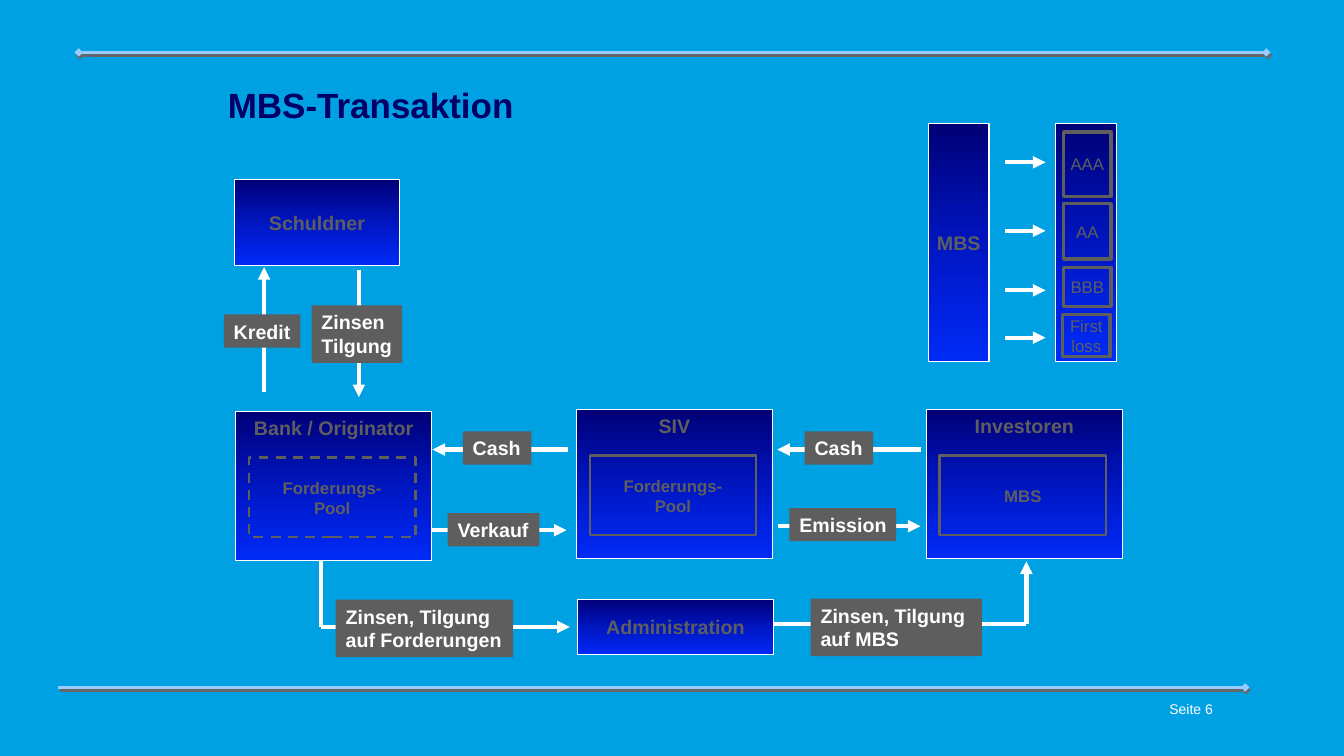
from lxml import etree
from pptx import Presentation
from pptx.dml.color import RGBColor
from pptx.enum.dml import MSO_LINE
from pptx.enum.shapes import MSO_CONNECTOR, MSO_SHAPE
from pptx.enum.text import MSO_ANCHOR, MSO_AUTO_SIZE, PP_ALIGN
from pptx.oxml.ns import qn
from pptx.util import Inches, Pt

STRAIGHT, RECTANGLE = MSO_CONNECTOR.STRAIGHT, MSO_SHAPE.RECTANGLE
TOP, MIDDLE = MSO_ANCHOR.TOP, MSO_ANCHOR.MIDDLE
LEFT, CENTER = PP_ALIGN.LEFT, PP_ALIGN.CENTER
NO_FIT = MSO_AUTO_SIZE.NONE
DASH = MSO_LINE.DASH

COLORS = {
    "background": "00A1E3", "title": "000066", "white": "FFFFFF", "grey": "5E5E5E",
    "rule": "99CCFF", "shadow": "676767", "party_top": "000076", "party_bottom": "0000FF",
}
RGB = {role: RGBColor.from_string(value) for role, value in COLORS.items()}

# Look of each kind of box: fill, outline, text frame, alignment and font
PARTY = {"fill": "gradient", "line": ("white", 0.75), "align": CENTER,
         "frame": {"vertical_anchor": MIDDLE, "word_wrap": False},
         "font": {"size": Pt(14), "bold": True}, "ink": "grey"}
HEADED_PARTY = PARTY | {"frame": {"vertical_anchor": TOP, "word_wrap": False}}
POOL = PARTY | {"fill": None, "line": ("grey", 1.75), "font": {"size": Pt(12), "bold": True}}
TRANCHE = POOL | {"line": ("grey", 2.25), "font": {"size": Pt(12), "bold": False}}
# A label has no right margin, so its longest word always fits on the line
LABEL = {"fill": "grey", "line": None, "align": LEFT,
         "frame": {"vertical_anchor": TOP, "auto_size": NO_FIT,
                   "word_wrap": True, "margin_right": 0},
         "font": {"size": Pt(14), "bold": True}, "ink": "white"}

prs = Presentation()
prs.slide_width, prs.slide_height = Inches(13.33), Inches(7.5)
slide = prs.slides.add_slide(prs.slide_layouts[5])
slide.background.fill.solid()
slide.background.fill.fore_color.rgb = RGB["background"]


def add_line(start, end, color="white", width=3, head=None, tail=None):
    """Draw a line without shadow and return its empty effect list."""
    line = slide.shapes.add_connector(STRAIGHT, *map(Inches, start + end))
    line.line.color.rgb = RGB[color]
    line.line.width = Pt(width)
    properties = line.element.spPr
    outline = properties.find(qn("a:ln"))
    for tag, kind in (("a:headEnd", head), ("a:tailEnd", tail)):
        if kind:
            etree.SubElement(outline, qn(tag), type=kind)
    return etree.SubElement(properties, qn("a:effectLst"))


def add_box(area, text, look):
    box = slide.shapes.add_shape(RECTANGLE, *map(Inches, area))
    box.shadow.inherit = False
    if look["fill"] == "gradient":
        box.fill.gradient()
        box.fill.gradient_angle = 270
        for stop, role in zip(box.fill.gradient_stops, ("party_top", "party_bottom")):
            stop.color.rgb = RGB[role]
        bottom_color = box.element.spPr.findall(".//" + qn("a:srgbClr"))[-1]
        etree.SubElement(bottom_color, qn("a:alpha"), val="73000")
    elif look["fill"]:
        box.fill.solid()
        box.fill.fore_color.rgb = RGB[look["fill"]]
    else:
        box.fill.background()
    if look["line"]:
        color, width = look["line"]
        box.line.color.rgb = RGB[color]
        box.line.width = Pt(width)
    else:
        box.line.fill.background()
    frame = box.text_frame
    frame.text = text
    for name, value in look["frame"].items():
        setattr(frame, name, value)
    for paragraph in frame.paragraphs:
        paragraph.alignment = look["align"]
        paragraph.font.name = "Arial"
        paragraph.font.color.rgb = RGB[look["ink"]]
        for name, value in look["font"].items():
            setattr(paragraph.font, name, value)
    return box


# Rules above and below the content
for start, end, tail in (((12.56, 0.52), (0.78, 0.52), "diamond"),
                         ((12.35, 6.82), (0.58, 6.82), None)):
    effects = add_line(start, end, "rule", 2, "diamond", tail)
    shadow = etree.SubElement(effects, qn("a:outerShdw"), dist=str(Pt(2.2)),
                              dir=str(63 * 60000), algn="ctr", rotWithShape="0")
    etree.SubElement(shadow, qn("a:srgbClr"), val=COLORS["shadow"])

# Title and page number
title = slide.shapes.title
page = slide.shapes.add_textbox(*map(Inches, (11.5, 6.9, 1.39, 0.27)))
title.left, title.top, title.width, title.height = map(Inches, (2.26, 0.91, 4.43, 0.49))
for shape, text, size, color in ((title, "MBS-Transaktion", 25, "title"),
                                 (page, "Seite 6", 10, "white")):
    frame = shape.text_frame
    frame.text = text
    frame.word_wrap = True
    frame.auto_size = NO_FIT
    frame.vertical_anchor = TOP
    heading = frame.paragraphs[0]
    heading.alignment = LEFT
    heading.font.name = "Arial"
    heading.font.size = Pt(size)
    heading.font.bold = shape is title
    heading.font.color.rgb = RGB[color]
title.text_frame.paragraphs[0].line_spacing = Pt(24)
for side in ("left", "top", "right", "bottom"):
    setattr(title.text_frame, f"margin_{side}", 0)

# Parties: three headed columns, each holding a pool
PARTY_WIDTH = 1.94
for left, top, party, holding, dash in (
    (2.34, 4.08, "Bank / Originator", "Forderungs-\nPool", DASH),
    (5.72, 4.06, "SIV", "Forderungs-\nPool", None),
    (9.19, 4.06, "Investoren", "MBS", None),
):
    add_box((left, top, PARTY_WIDTH, 1.48), party, HEADED_PARTY)
    pool = add_box((left + 0.13, top + 0.46, 1.65, 0.79), holding, POOL)
    if dash:
        pool.line.dash_style = dash
add_box((2.33, 1.78, 1.63, 0.85), "Schuldner", PARTY)
add_box((5.73, 5.95, PARTY_WIDTH, 0.54), "Administration", PARTY)

# Flows: points along the way, then the label lying on it
for points, label, area in (
    ([(2.62, 3.89), (2.62, 2.65)], "Kredit", (2.22, 3.12, 0.76, 0.33)),
    ([(3.56, 2.68), (3.56, 3.94)], "Zinsen\nTilgung", (3.09, 3.03, 0.9, 0.57)),
    ([(5.63, 4.46), (4.29, 4.46)], "Cash", (4.59, 4.28, 0.68, 0.33)),
    ([(4.28, 5.26), (5.62, 5.26)], "Verkauf", (4.44, 5.09, 0.91, 0.33)),
    ([(9.13, 4.46), (7.71, 4.46)], "Cash", (7.98, 4.28, 0.68, 0.33)),
    ([(7.72, 5.22), (9.13, 5.22)], "Emission", (7.83, 5.04, 1.06, 0.33)),
    ([(3.18, 5.56), (3.18, 6.22), (5.65, 6.22)],
     "Zinsen, Tilgung\nauf Forderungen", (3.33, 5.95, 1.76, 0.57)),
    ([(7.68, 6.19), (10.18, 6.19), (10.18, 5.57)],
     "Zinsen, Tilgung\nauf MBS", (8.04, 5.94, 1.7, 0.57)),
):
    for start, end in zip(points, points[1:]):
        add_line(start, end, tail="triangle" if end == points[-1] else None)
    add_box(area, label, LABEL)

# Split of the MBS into rated tranches
for left, name in ((9.21, "MBS"), (10.47, "")):
    add_box((left, 1.23, 0.6, 2.36), name, PARTY)
for rating, left, top, height, arrow_y in (
    ("AAA", 10.55, 1.31, 0.64, 1.61),
    ("AA", 10.55, 2.02, 0.55, 2.29),
    ("BBB", 10.55, 2.65, 0.39, 2.88),
    ("First\nloss", 10.54, 3.12, 0.42, 3.35),
):
    add_box((left, top, 0.47, height), rating, TRANCHE)
    add_line((9.97, arrow_y), (10.37, arrow_y), tail="triangle")

prs.save("out.pptx")
